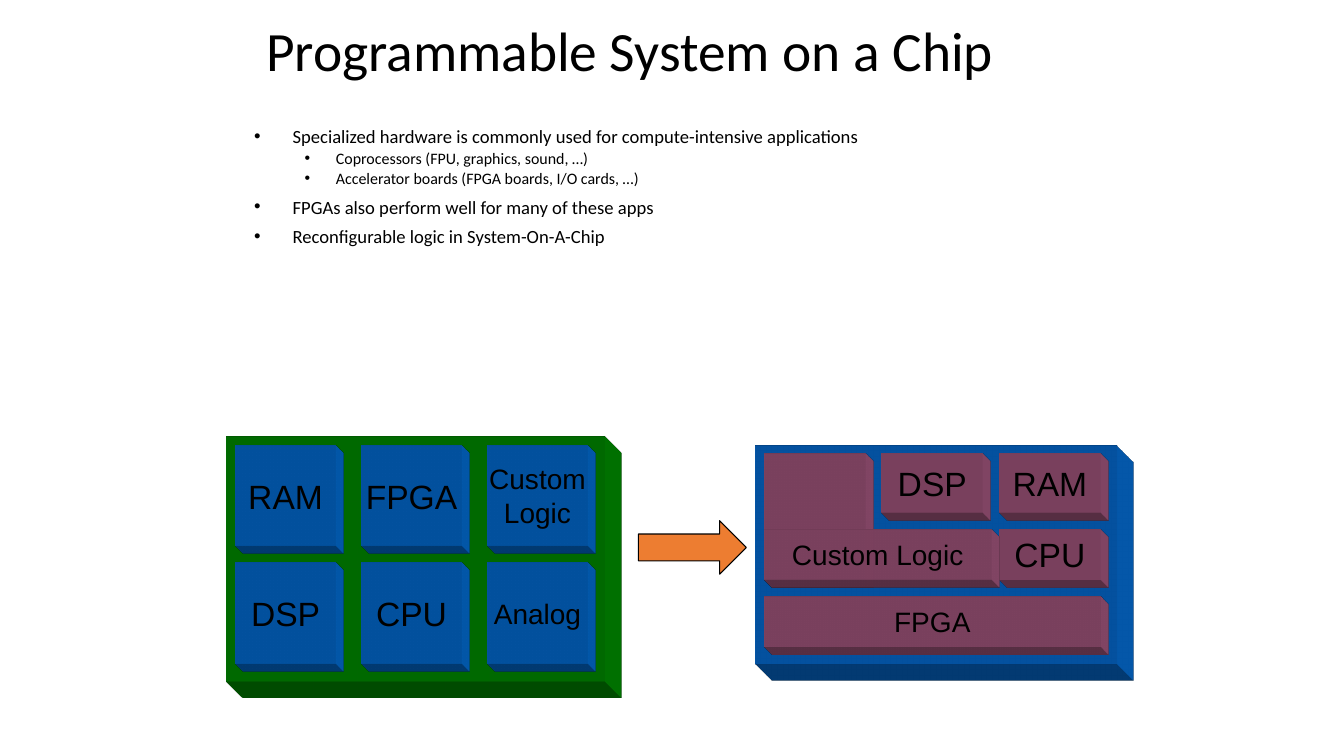
from lxml.etree import SubElement
from pptx import Presentation
from pptx.dml.color import RGBColor
from pptx.enum.shapes import MSO_SHAPE
from pptx.enum.text import MSO_ANCHOR, MSO_AUTO_SIZE, PP_ALIGN
from pptx.oxml.ns import qn
from pptx.util import Cm, Pt

# Content
TITLE = "Programmable System on a Chip"
BULLETS = [
    (0, "Specialized hardware is commonly used for compute-intensive applications"),
    (1, "Coprocessors (FPU, graphics, sound, …)"),
    (1, "Accelerator boards (FPGA boards, I/O cards, …)"),
    (0, "FPGAs also perform well for many of these apps"),
    (0, "Reconfigurable logic in System-On-A-Chip"),
]
LEVELS = [  # size, space before, left margin and hanging indent
    {"size": 13.3, "before": 10, "margin": 0.97, "hang": 0.97},
    {"size": 11.4, "before": 5, "margin": 2.06, "hang": 0.79},
]
GREEN, BLUE, PLUM, ORANGE, BLACK = "008000", "0563C1", "954F72", "ED7D31", "000000"

# Chips are laid out in units of a twelfth of an inch: left, top, width, height
UNIT = 2.54 / 12
BOARD = (27, 52, 45, 29)
BOARD_PARTS = [
    [("RAM", 24), ("FPGA", 24), ("Custom\nLogic", 20)],
    [("DSP", 24), ("CPU", 24), ("Analog", 20)],
]
SYSTEM = (90, 53, 43, 26)
SYSTEM_PARTS = [
    ("DSP", 24, (105, 54, 12, 7)),
    ("RAM", 24, (119, 54, 12, 7)),
    ("CPU", 24, (119, 63, 12, 6)),
    ("", 20, (91, 54, 12, 15)),
    ("Custom Logic", 20, (91, 63, 27, 6)),
    ("FPGA", 20, (91, 71, 40, 6)),
]
CHIP_DEPTH, PART_DEPTH = Cm(1.2), Cm(0.57)


def color(hex_string):
    return RGBColor.from_string(hex_string)


def set_format(target, values):
    for name, value in values.items():
        setattr(target, name, value)


def set_font(font, name, size):
    set_format(font, {"name": name, "size": Pt(size)})
    font.color.rgb = color(BLACK)


def place(shape, left, top, width, height):
    set_format(shape, {"left": Cm(left), "top": Cm(top),
                       "width": Cm(width), "height": Cm(height)})


def extrude(shape, depth, fill):
    """Give the shape a solid body running down to the right."""
    properties = shape._element.spPr
    scene = SubElement(properties, qn("a:scene3d"))
    SubElement(scene, qn("a:camera"), prst="legacyObliqueBottomRight")
    SubElement(scene, qn("a:lightRig"), rig="legacyFlat3", dir="t")
    solid = SubElement(properties, qn("a:sp3d"), extrusionH=str(int(depth)),
                       prstMaterial="legacyMatrix")
    for bevel in ("a:bevelT", "a:bevelB"):
        SubElement(solid, qn(bevel), w="13500", h="13500", prst="angle")
    SubElement(SubElement(solid, qn("a:extrusionClr")), qn("a:srgbClr"), val=fill)


def add_block(page, bounds, fill, depth, label="", size=24):
    block = page.shapes.add_shape(MSO_SHAPE.RECTANGLE,
                                  *(Cm(value * UNIT) for value in bounds))
    block.shadow.inherit = False
    block.fill.solid()
    block.fill.fore_color.rgb = color(fill)
    block.line.fill.background()
    extrude(block, depth, fill)
    if label:
        frame = block.text_frame
        set_format(frame, {"text": label, "word_wrap": False,
                           "vertical_anchor": MSO_ANCHOR.MIDDLE})
        for para in frame.paragraphs:
            para.alignment = PP_ALIGN.CENTER
            set_font(para.runs[0].font, "Arial", size)


def add_title(page):
    title = page.shapes.title
    place(title, 6.45, 0.84, 20.62, 1.02)
    set_format(title.text_frame, {"text": TITLE, "word_wrap": True,
                                  "auto_size": MSO_AUTO_SIZE.NONE,
                                  "vertical_anchor": MSO_ANCHOR.MIDDLE})
    para = title.text_frame.paragraphs[0]
    set_format(para, {"alignment": PP_ALIGN.LEFT, "line_spacing": 0.9})
    set_font(para.runs[0].font, "Calibri", 39.6)


def add_bullets(page):
    body = page.placeholders[1]
    place(body, 6.15, 3.18, 21.79, 3.4)
    frame = body.text_frame
    set_format(frame, {"text": "\n".join(text for _, text in BULLETS),
                       "word_wrap": True, "auto_size": MSO_AUTO_SIZE.NONE})
    for para, (level, _) in zip(frame.paragraphs, BULLETS):
        style = LEVELS[level]
        set_format(para, {"level": level, "line_spacing": 0.7,
                          "space_before": Pt(style["before"])})
        set_font(para.runs[0].font, "Calibri", style["size"])
        properties = para._p.get_or_add_pPr()
        properties.set("marL", str(int(Cm(style["margin"]))))
        properties.set("indent", str(-int(Cm(style["hang"]))))
        SubElement(properties, qn("a:buFont"), typeface="Arial")
        SubElement(properties, qn("a:buChar"), char="•")


def add_chips(page):
    # Board of separate parts, on an even grid
    add_block(page, BOARD, GREEN, CHIP_DEPTH)
    for row, parts in enumerate(BOARD_PARTS):
        for column, (label, size) in enumerate(parts):
            bounds = (28 + 15 * column, 53 + 14 * row, 12, 12)
            add_block(page, bounds, BLUE, PART_DEPTH, label, size)
    # Single chip that holds them all
    add_block(page, SYSTEM, BLUE, CHIP_DEPTH)
    for label, size, bounds in SYSTEM_PARTS:
        add_block(page, bounds, PLUM, PART_DEPTH, label, size)


def add_arrow(page):
    arrow = page.shapes.add_shape(MSO_SHAPE.RIGHT_ARROW, Cm(16.09), Cm(13.12),
                                  Cm(2.72), Cm(1.35))
    arrow.shadow.inherit = False
    arrow.fill.solid()
    arrow.fill.fore_color.rgb = color(ORANGE)
    arrow.line.color.rgb = color(BLACK)
    arrow.line.width = Pt(0.75)


def main():
    deck = Presentation()
    set_format(deck, {"slide_width": Cm(33.87), "slide_height": Cm(19.05)})
    page = deck.slides.add_slide(deck.slide_layouts[1])
    add_title(page)
    add_bullets(page)
    add_chips(page)
    add_arrow(page)
    deck.save("out.pptx")


if __name__ == "__main__":
    main()
